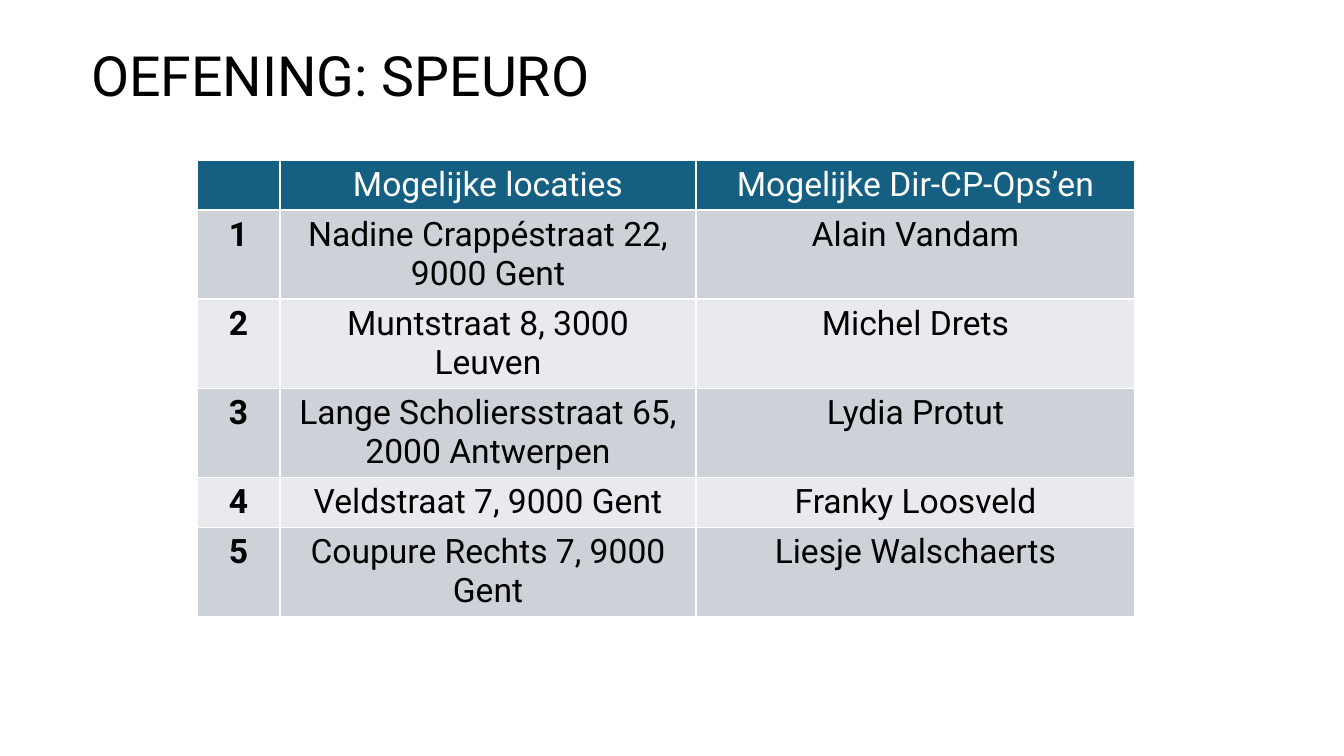
from dataclasses import dataclass

from pptx import Presentation
from pptx.dml.color import RGBColor
from pptx.enum.text import MSO_ANCHOR, PP_ALIGN
from pptx.util import Pt

CENTER, LEFT = PP_ALIGN.CENTER, PP_ALIGN.LEFT
BOTTOM = MSO_ANCHOR.BOTTOM

TITLE = "OEFENING: SPEURO"
HEADER = ("", "Mogelijke locaties", "Mogelijke Dir-CP-Ops’en")
CLUES = [
    ("Nadine Crappéstraat 22, 9000 Gent", "Alain Vandam"),
    ("Muntstraat 8, 3000 Leuven", "Michel Drets"),
    ("Lange Scholiersstraat 65, 2000 Antwerpen", "Lydia Protut"),
    ("Veldstraat 7, 9000 Gent", "Franky Loosveld"),
    ("Coupure Rechts 7, 9000 Gent", "Liesje Walschaerts"),
]

SLIDE_W, SLIDE_H = 1344, 756
TITLE_BOX = (81, 40, 1171, 74)
TABLE_LEFT, TABLE_TOP = 197, 160
COL_WIDTHS = (83, 416, 439)
ONE_LINE, TWO_LINES = 50, 89
ROW_HEIGHTS = (ONE_LINE, TWO_LINES, TWO_LINES, TWO_LINES, ONE_LINE, TWO_LINES)


@dataclass(frozen=True)
class Theme:
    font: str = "Roboto"
    title_size: float = 39.6
    table_size: float = 24
    text: str = "000000"
    header_text: str = "FFFFFF"
    header_fill: str = "156082"
    bands: tuple = ("CCD2D8", "E8EAED")


THEME = Theme()


def px(n):
    return round(n * 12192000 / SLIDE_W)


def write(tf, text, *, size, color=THEME.text, bold=False, align=LEFT):
    p = tf.paragraphs[0]
    p.alignment = align
    r = p.add_run()
    r.text = text
    r.font.name = THEME.font
    r.font.size = Pt(size)
    r.font.bold = bold
    r.font.color.rgb = RGBColor.from_string(color)
    return p


def add_title(slide):
    sp = slide.shapes.title
    sp.left, sp.top, sp.width, sp.height = map(px, TITLE_BOX)
    tf = sp.text_frame
    tf.word_wrap = True
    tf.vertical_anchor = BOTTOM
    write(tf, TITLE, size=THEME.title_size).line_spacing = 0.9


def add_clue_table(slide):
    rows = [HEADER] + [(str(n), *clue) for n, clue in enumerate(CLUES, 1)]
    box = (TABLE_LEFT, TABLE_TOP, sum(COL_WIDTHS), sum(ROW_HEIGHTS))
    table = slide.shapes.add_table(len(rows), len(HEADER), *map(px, box)).table
    table.first_col = True
    for col, width in zip(table.columns, COL_WIDTHS):
        col.width = px(width)
    for i, (row, height) in enumerate(zip(table.rows, ROW_HEIGHTS)):
        row.height = px(height)
        is_header = i == 0
        fill = THEME.header_fill if is_header else THEME.bands[(i - 1) % 2]
        color = THEME.header_text if is_header else THEME.text
        for j, (cell, text) in enumerate(zip(row.cells, rows[i])):
            cell.fill.solid()
            cell.fill.fore_color.rgb = RGBColor.from_string(fill)
            if text:
                write(cell.text_frame, text, size=THEME.table_size, color=color,
                      bold=j == 0, align=CENTER)


def main():
    prs = Presentation()
    prs.slide_width, prs.slide_height = px(SLIDE_W), px(SLIDE_H)
    slide = prs.slides.add_slide(prs.slide_layouts[5])
    add_title(slide)
    add_clue_table(slide)
    prs.save("out.pptx")


if __name__ == "__main__":
    main()
